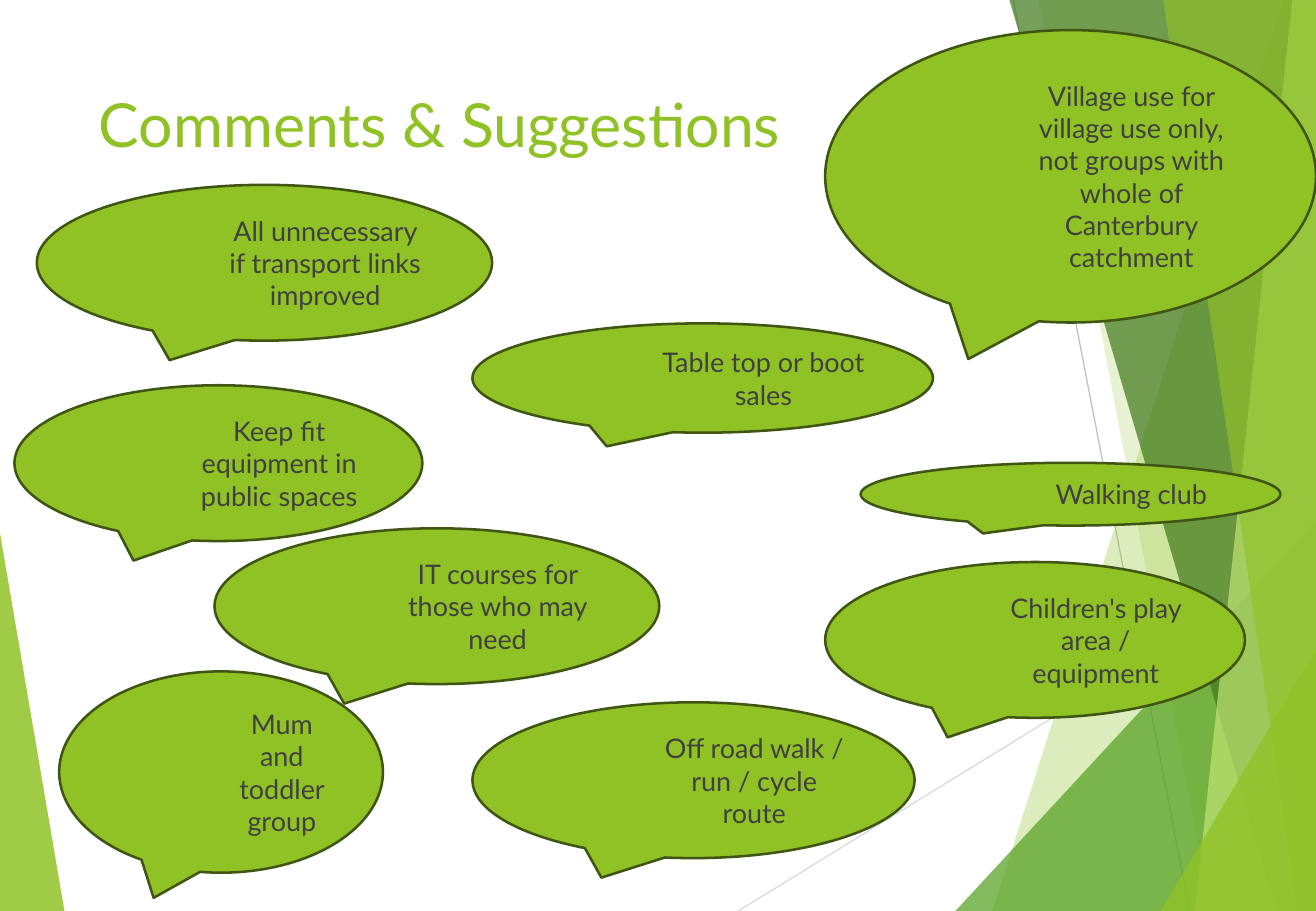
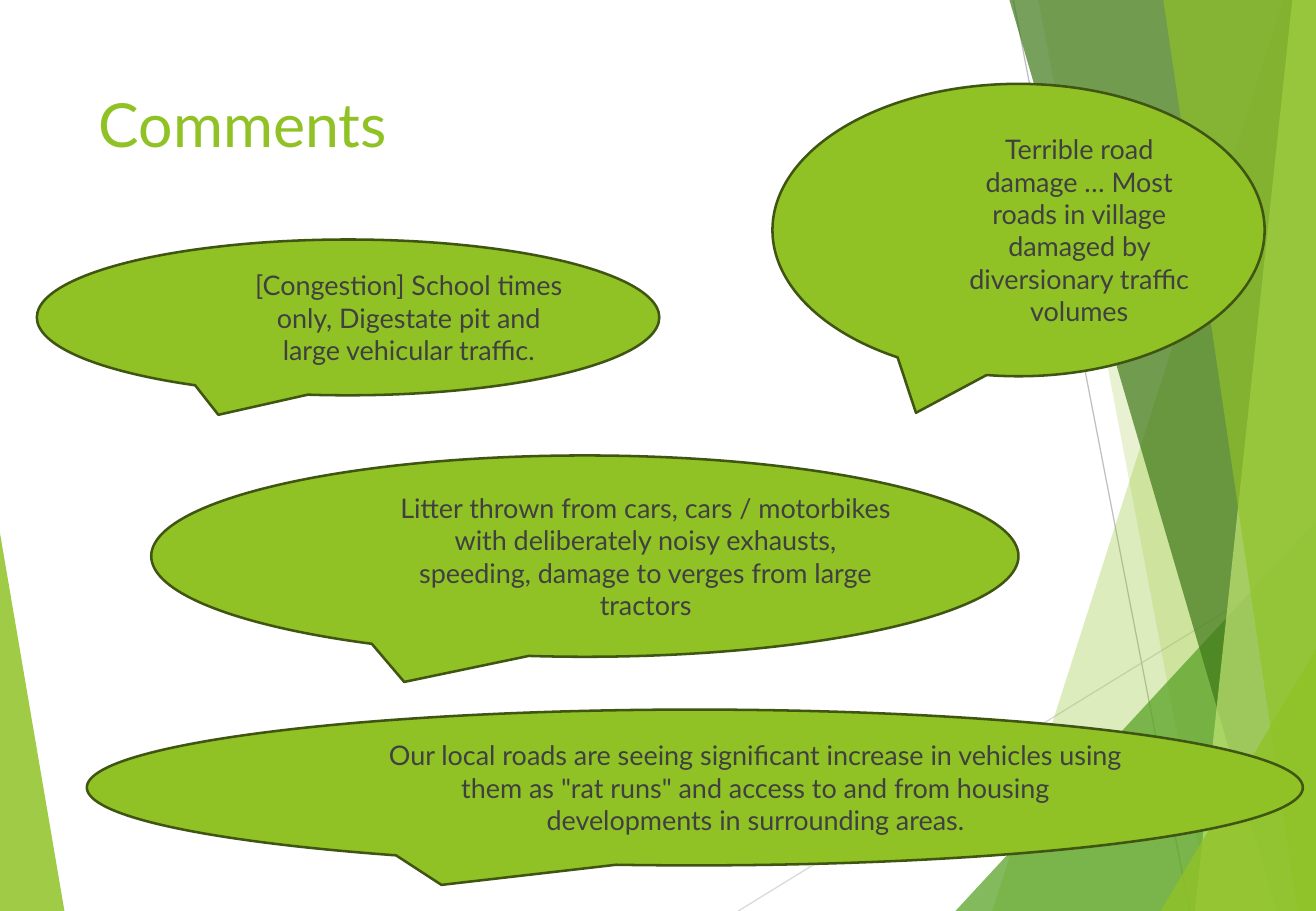
from pptx import Presentation
from pptx.dml.color import RGBColor
from pptx.enum.shapes import MSO_CONNECTOR, MSO_SHAPE
from pptx.enum.text import MSO_ANCHOR, MSO_AUTO_SIZE, PP_ALIGN
from pptx.oxml.ns import qn
from pptx.util import Inches, Pt
from lxml import etree

STRAIGHT = MSO_CONNECTOR.STRAIGHT
CALLOUT = MSO_SHAPE.OVAL_CALLOUT
MIDDLE = MSO_ANCHOR.MIDDLE
CENTER = PP_ALIGN.CENTER
GROW = MSO_AUTO_SIZE.SHAPE_TO_FIT_TEXT

WIDTH, HEIGHT = Inches(10.83), Inches(7.5)
FONT = "Lato"
LIME, GREEN, FOREST, PALE = "90C226", "54A021", "3F7819", "C0E474"
OUTLINE, INK = "3F5511", "404040"

# All positions and sizes are percentages of the slide's width and height.
TITLE_BOX = (6.6, 8.9, 69.4, 19.2)
LEFT_FACET = (LIME, 85, [(0, 58.5), (4.9, 100), (0, 100)])
RAYS = [("D9D9D9", (56.1, 100), (100, 61)), ("BFBFBF", (77, 0), (90.4, 100))]
RIGHT_FACETS = [
    (LIME, 30, [(97.5, 0), (75.4, 100), (100, 100), (100, 0)]),
    (LIME, 20, [(78.9, 0), (92, 100), (100, 100), (100, 0)]),
    (GREEN, 72, [(72.6, 100), (100, 57.2), (100, 100)]),
    (FOREST, 70, [(76.7, 0), (97, 100), (100, 100), (100, 0)]),
    (PALE, 70, [(98.2, 0), (90.8, 100), (100, 100), (100, 0)]),
    (LIME, 65, [(88.4, 0), (98.6, 100), (100, 100), (100, 0)]),
    (LIME, 80, [(88.2, 100), (100, 71.3), (100, 100)]),
]

# Bubble heights by the number of text lines they hold.
ONE, TWO, THREE, FOUR, SIX = 6.9, 12, 17.1, 22.1, 32.1
SLIDES = [
    ("Comments & Suggestions", [
        ((62.7, 3.3, 37.3, SIX),
         "Village use for village use only, not groups with whole of Canterbury catchment"),
        ((35.9, 35.5, 35, TWO), "Table top or boot sales"),
        ((2.8, 20.3, 34.6, THREE), "All unnecessary if transport links improved"),
        ((1.1, 42.3, 31, THREE), "Keep fit equipment in public spaces"),
        ((65.4, 50.8, 31.9, ONE), "Walking club"),
        ((16.3, 58, 33.8, THREE), "IT courses for those who may need"),
        ((62.7, 61.7, 31.9, THREE), "Children's play area / equipment"),
        ((4.5, 73.7, 24.6, FOUR), "Mum and toddler group"),
        ((35.9, 77.1, 33.6, THREE), "Off road walk / run / cycle route"),
    ]),
    ("Comments", [
        ((58.7, 9.2, 37.4, SIX),
         "Terrible road damage … Most roads in village damaged by diversionary traffic volumes"),
        ((11.5, 50, 65.9, FOUR),
         "Litter thrown from cars, cars / motorbikes with deliberately noisy exhausts, "
         "speeding, damage to verges from large tractors"),
        ((2.8, 26.3, 47.3, THREE),
         "[Congestion] School times only, Digestate pit and large vehicular traffic."),
        ((6.6, 77.9, 92.4, THREE),
         'Our local roads are seeing significant increase in vehicles using them as "rat runs" '
         "and access to and from housing developments in surrounding areas."),
    ]),
]


def rgb(color):
    return RGBColor.from_string(color)


def scaled(*shares):
    """Turn alternating x and y percentages into slide lengths."""
    return [round(share * (HEIGHT if index % 2 else WIDTH) / 100)
            for index, share in enumerate(shares)]


def style_text(para, size, color):
    para.font.name = FONT
    para.font.size = Pt(size)
    para.font.color.rgb = rgb(color)


def add_facet(page, color, opacity, corners):
    points = [scaled(*corner) for corner in corners]
    builder = page.shapes.build_freeform(*points[0], scale=1.0)
    builder.add_line_segments(points[1:], close=True)
    facet = builder.convert_to_shape()
    facet.shadow.inherit = False
    facet.line.fill.background()
    facet.fill.solid()
    facet.fill.fore_color.rgb = rgb(color)
    solid_color = facet.fill._xPr.find(qn("a:solidFill"))[0]
    etree.SubElement(solid_color, qn("a:alpha"), val=str(opacity * 1000))


def add_ray(page, color, start, end):
    ray = page.shapes.add_connector(STRAIGHT, *scaled(*start, *end))
    ray.line.color.rgb = rgb(color)
    ray.line.width = Pt(0.75)
    etree.SubElement(ray._element.spPr, qn("a:effectLst"))


def add_backdrop(page):
    add_facet(page, *LEFT_FACET)
    for ray in RAYS:
        add_ray(page, *ray)
    for facet in RIGHT_FACETS:
        add_facet(page, *facet)


def add_title(page, text):
    frame = page.shapes.add_textbox(*scaled(*TITLE_BOX)).text_frame
    frame.word_wrap = True
    frame.text = text
    style_text(frame.paragraphs[0], 36, LIME)


def add_bubble(page, box, text):
    bubble = page.shapes.add_shape(CALLOUT, *scaled(*box))
    bubble.shadow.inherit = False
    bubble.fill.solid()
    bubble.fill.fore_color.rgb = rgb(LIME)
    bubble.line.color.rgb = rgb(OUTLINE)
    bubble.line.width = Pt(1.5)
    frame = bubble.text_frame
    frame.word_wrap = True
    frame.auto_size = GROW
    frame.vertical_anchor = MIDDLE
    frame.margin_left = frame.margin_right = 0
    frame.text = text
    para = frame.paragraphs[0]
    para.alignment = CENTER
    margins = para._p.get_or_add_pPr()
    margins.set("marL", str(Inches(1)))
    margins.set("indent", "0")
    style_text(para, 16, INK)


def add_comment_slide(deck, title, bubbles):
    page = deck.slides.add_slide(deck.slide_layouts[6])
    add_backdrop(page)
    add_title(page, title)
    for box, text in bubbles:
        add_bubble(page, box, text)


def main():
    deck = Presentation()
    deck.slide_width, deck.slide_height = WIDTH, HEIGHT
    for title, bubbles in SLIDES:
        add_comment_slide(deck, title, bubbles)
    deck.save("out.pptx")


if __name__ == "__main__":
    main()
